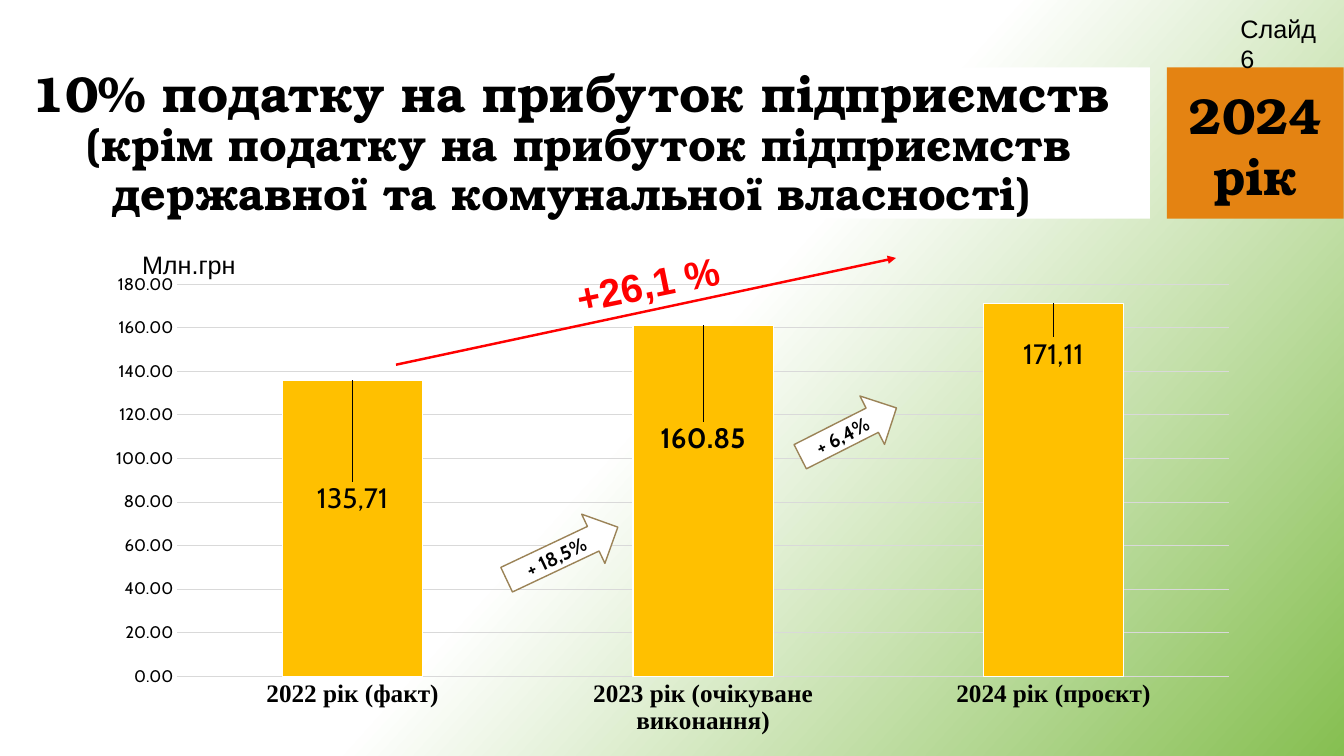
"""Builds the slide on 10% of corporate income tax, 2022 to 2024."""
from lxml import etree
from pptx import Presentation
from pptx.chart.data import CategoryChartData
from pptx.dml.color import RGBColor
from pptx.enum import chart as charts, shapes, text
from pptx.oxml.ns import qn
from pptx.util import Cm, Pt

WHITE = RGBColor(0xFF, 0xFF, 0xFF)
BLACK = RGBColor(0, 0, 0)
RED = RGBColor(0xFF, 0, 0)
GREEN = RGBColor(0x86, 0xBF, 0x51)
ORANGE = RGBColor(0xE4, 0x83, 0x12)
AMBER = RGBColor(0xFF, 0xC0, 0)
BROWN = RGBColor(0x9B, 0x83, 0x57)
GREY = RGBColor(0xD9, 0xD9, 0xD9)
SERIF = "TeX Gyre Bonum"


def style(font, size, name, bold=False, color=BLACK):
    font.size, font.name, font.bold = Pt(size), name, bold
    font.color.rgb = color


def write(frame, wording, size=18, name="Arial", bold=False, color=BLACK,
          align=text.PP_ALIGN.LEFT, anchor=text.MSO_ANCHOR.TOP, wrap=True):
    frame.word_wrap = wrap
    frame.vertical_anchor = anchor
    frame.text = wording
    for paragraph in frame.paragraphs:
        paragraph.alignment = align
        for run in paragraph.runs:
            style(run.font, size, name, bold, color)


CENTRED = dict(bold=True, align=text.PP_ALIGN.CENTER, anchor=text.MSO_ANCHOR.MIDDLE)

deck = Presentation()
deck.slide_width, deck.slide_height = Cm(33.87), Cm(19.05)
slide = deck.slides.add_slide(deck.slide_layouts[5])

backdrop = slide.background.fill
backdrop.gradient()
backdrop.gradient_angle = 318
for stop, color, position in zip(backdrop.gradient_stops, (WHITE, GREEN), (0.5, 1)):
    stop.color.rgb = color
    stop.position = position

for left, width, color in ((0, 28.98, WHITE), (29.41, 4.45, ORANGE)):
    band = slide.shapes.add_shape(
        shapes.MSO_SHAPE.RECTANGLE, Cm(left), Cm(1.7), Cm(width), Cm(3.81))
    band.shadow.inherit = False
    band.fill.solid()
    band.fill.fore_color.rgb = color
    band.line.fill.background()

title = slide.shapes.title
title.left, title.top, title.width, title.height = Cm(0), Cm(1.8), Cm(29.21), Cm(3.68)
write(title.text_frame, "10% податку на прибуток підприємств \v(крім податку на прибуток "
      "підприємств державної та комунальної власності) ", 32, SERIF, **CENTRED)
title.text_frame.auto_size = text.MSO_AUTO_SIZE.NONE
heading = title.text_frame.paragraphs[0]
heading.line_spacing = 0.9
heading.runs[0].font.size = Pt(36)
slide.shapes._spTree.append(title._element)

revenue = CategoryChartData(number_format="#,##0.00")
revenue.categories = ["2022 рік (факт)", "2023 рік (очікуване виконання)", "2024 рік (проєкт)"]
revenue.add_series("Series 1", (135.71, 160.85, 171.11))
chart = slide.shapes.add_chart(
    charts.XL_CHART_TYPE.COLUMN_CLUSTERED, Cm(2.34), Cm(6.68), Cm(29.21), Cm(12.09),
    revenue).chart
chart.has_legend = chart.has_title = False
style(chart.font, 10, "Cabin")

years, amounts = chart.category_axis, chart.value_axis
for axis in (years, amounts):
    axis.major_tick_mark = axis.minor_tick_mark = charts.XL_TICK_MARK.NONE
    axis.format.line.fill.background()
style(years.tick_labels.font, 18, "Times New Roman", True)
style(amounts.tick_labels.font, 12, "Cabin")
amounts.tick_labels.number_format = "#,##0.00"
amounts.tick_labels.number_format_is_linked = False
amounts.minimum_scale, amounts.maximum_scale, amounts.major_unit = 0, 180, 20
amounts.major_gridlines.format.line.color.rgb = GREY
amounts.major_gridlines.format.line.width = Pt(0.75)

plot = chart.plots[0]
plot.gap_width = 150
plot.vary_by_categories = False
bars = plot.series[0]
bars.format.fill.solid()
bars.format.fill.fore_color.rgb = AMBER
bars.format.line.color.rgb = WHITE
bars.format.line.width = Pt(0.75)
bars.data_labels.show_value = True
bars.data_labels.number_format = "#,##0.00"
bars.data_labels.number_format_is_linked = False
style(bars.data_labels.font, 20, "Cabin", True)

for index, wording in enumerate(("135,71", None, "171,11")):
    label = bars.points[index].data_label
    if wording:
        write(label.text_frame, wording, 20, "Cabin", align=text.PP_ALIGN.CENTER)
    else:
        style(label.font, 20, "Cabin", True)
    label.position = charts.XL_LABEL_POSITION.OUTSIDE_END

layouts = [(mark.find(qn("c:idx")), {"x": 0, "y": drop}) for mark, drop in
           zip(bars._element.iter(qn("c:dLbl")), (0.29, 0.28, 0.15))]
plot_area = chart._chartSpace.chart.plotArea
for old in plot_area.findall(qn("c:layout")):
    plot_area.remove(old)
plot_layout = etree.Element(qn("c:layout"))
plot_area.insert(0, plot_layout)
manual = etree.SubElement(plot_layout, qn("c:manualLayout"))
for tag, value in (("layoutTarget", "inner"), ("xMode", "edge"), ("yMode", "edge"),
                   ("x", 0.073), ("y", 0.04), ("w", 0.907), ("h", 0.817)):
    etree.SubElement(manual, qn("c:" + tag)).set("val", str(value))
for idx, offsets in layouts:
    label_layout = etree.Element(qn("c:layout"))
    idx.addnext(label_layout)
    manual = etree.SubElement(label_layout, qn("c:manualLayout"))
    for tag, value in offsets.items():
        etree.SubElement(manual, qn("c:" + tag)).set("val", str(value))

for left, top, width, angle, growth in ((12.62, 13.26, 3.1, 334.7, "+ 18,5%"),
                                        (20.02, 10.21, 2.72, 333.1, "+ 6,4%")):
    step = slide.shapes.add_shape(
        shapes.MSO_SHAPE.RIGHT_ARROW, Cm(left), Cm(top), Cm(width), Cm(1.37))
    step.rotation = angle
    step.shadow.inherit = False
    step.fill.solid()
    step.fill.fore_color.rgb = WHITE
    step.line.color.rgb = BROWN
    step.line.width = Pt(1)
    write(step.text_frame, growth, 14, "Cabin", wrap=False, **CENTRED)

trend = slide.shapes.add_connector(
    shapes.MSO_CONNECTOR.STRAIGHT, Cm(9.98), Cm(9.19), Cm(22.58), Cm(6.5))
trend.line.color.rgb = RED
trend.line.width = Pt(1.75)
etree.SubElement(trend.line._get_or_add_ln(), qn("a:tailEnd")).set("type", "triangle")
etree.SubElement(trend._element.spPr, qn("a:effectLst"))

for left, top, width, height, angle, wording, look in (
        (3.33, 6.17, 3.07, 1.02, 0, "Млн.грн", {}),
        (14.25, 6.4, 4.34, 1.45, 348.4, "+26,1 %",
         dict(size=28, bold=True, color=RED, wrap=False)),
        (31.01, 0.2, 2.59, 1.02, 0, "Слайд 6", {}),
        (29.67, 1.98, 3.94, 3.33, 0, "2024 \nрік", dict(size=36, name=SERIF, **CENTRED))):
    caption = slide.shapes.add_textbox(Cm(left), Cm(top), Cm(width), Cm(height))
    caption.rotation = angle
    write(caption.text_frame, wording, **look)

deck.save("out.pptx")
